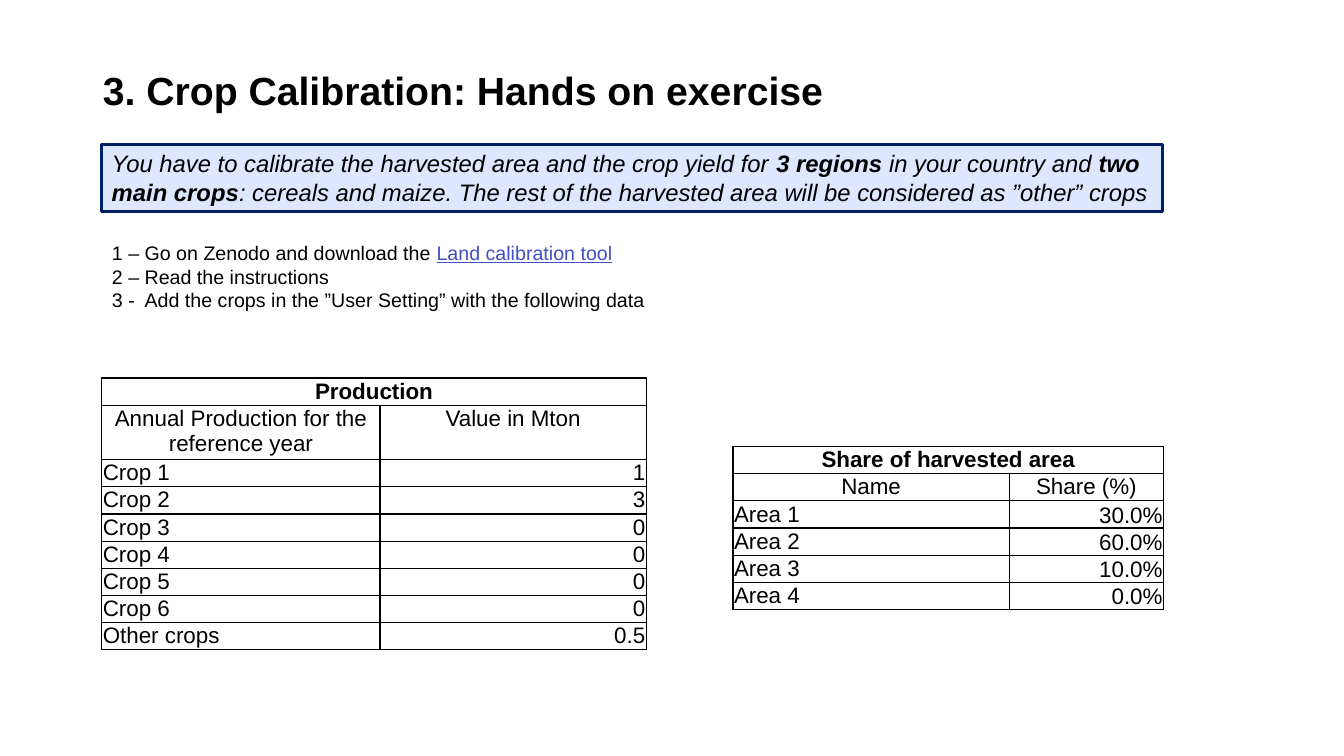
from dataclasses import dataclass

from lxml import etree
from pptx import Presentation
from pptx.dml.color import RGBColor
from pptx.enum import shapes, text
from pptx.oxml import ns
from pptx.util import Inches, Pt


@dataclass(frozen=True)
class Theme:
    font: str = "Arial"
    ink: str = "000000"
    link: str = "4151C3"
    brief_fill: str = "DDE7FF"
    brief_line: str = "012069"
    title_size: int = 28
    brief_size: int = 17
    steps_size: int = 14
    table_size: int = 16
    border_width: float = 1


THEME = Theme()

BRIEF = [
    ("You have to calibrate the harvested area and the crop yield for ", False),
    ("3 regions ", True),
    ("in your country and ", False),
    ("two main crops", True),
    (": cereals and maize. The rest of the harvested area will be "
     "considered as ”other” crops", False),
]
STEPS = [
    [("1 – Go on Zenodo and download the ", False), ("Land calibration tool", True)],
    [("2 – Read the instructions", False)],
    [("3 -  Add the crops in the ”User Setting” with the following data", False)],
]
PRODUCTION = [
    ("Annual Production for the reference year", "Value in Mton"),
    ("Crop 1", "1"),
    ("Crop 2", "3"),
    ("Crop 3", "0"),
    ("Crop 4", "0"),
    ("Crop 5", "0"),
    ("Crop 6", "0"),
    ("Other crops", "0.5"),
]
HARVESTED_SHARE = [
    ("Name", "Share (%)"),
    ("Area 1", "30.0%"),
    ("Area 2", "60.0%"),
    ("Area 3", "10.0%"),
    ("Area 4", "0.0%"),
]


def place(shape, box):
    shape.left, shape.top, shape.width, shape.height = map(Inches, box)


def style(run, size, color=THEME.ink, bold=False, italic=False, underline=False):
    font = run.font
    font.name, font.size = THEME.font, Pt(size)
    font.color.rgb = RGBColor.from_string(color)
    font.bold, font.italic, font.underline = bold, italic, underline


def add_run(paragraph, words, size, **look):
    run = paragraph.add_run()
    run.text = words
    style(run, size, **look)


def set_insets(frame):
    frame.margin_left = frame.margin_right = Inches(0.1)
    frame.margin_top = frame.margin_bottom = Inches(0.05)


def fill_title(title, box):
    place(title, box)
    frame = title.text_frame
    set_insets(frame)
    frame.auto_size = text.MSO_AUTO_SIZE.NONE
    frame.vertical_anchor = text.MSO_ANCHOR.BOTTOM
    frame.text = "3. Crop Calibration: Hands on exercise"
    heading = frame.paragraphs[0]
    heading.alignment = text.PP_ALIGN.LEFT
    heading.line_spacing = 0.9
    style(heading.runs[0], THEME.title_size, bold=True)


def add_brief(slide, box):
    brief = slide.shapes.add_shape(shapes.MSO_SHAPE.RECTANGLE, *map(Inches, box))
    brief.shadow.inherit = False
    brief.fill.solid()
    brief.fill.fore_color.rgb = RGBColor.from_string(THEME.brief_fill)
    brief.line.color.rgb = RGBColor.from_string(THEME.brief_line)
    brief.line.width = Pt(2.25)
    frame = brief.text_frame
    set_insets(frame)
    frame.word_wrap = True
    frame.vertical_anchor = text.MSO_ANCHOR.TOP
    task = frame.paragraphs[0]
    task.alignment = text.PP_ALIGN.LEFT
    for words, bold in BRIEF:
        add_run(task, words, THEME.brief_size, bold=bold, italic=True)


def fill_steps(body, box):
    place(body, box)
    frame = body.text_frame
    set_insets(frame)
    frame.auto_size = text.MSO_AUTO_SIZE.NONE
    for index, parts in enumerate(STEPS):
        step = frame.add_paragraph() if index else frame.paragraphs[0]
        properties = step._p.get_or_add_pPr()
        properties.set("marL", "0")
        properties.set("indent", "0")
        etree.SubElement(properties, ns.qn("a:buNone"))
        step.space_before = Pt(0)
        for words, linked in parts:
            add_run(step, words, THEME.steps_size, underline=linked,
                    color=THEME.link if linked else THEME.ink)


def add_borders(cell):
    properties = cell._tc.get_or_add_tcPr()
    for index, side in enumerate(("lnL", "lnR", "lnT", "lnB")):
        border = etree.Element(ns.qn(f"a:{side}"), w=str(Pt(THEME.border_width)))
        fill = etree.SubElement(border, ns.qn("a:solidFill"))
        etree.SubElement(fill, ns.qn("a:srgbClr"), val=THEME.ink)
        properties.insert(index, border)


def fill_cell(cell, words, align, anchor, bold):
    cell.fill.background()
    add_borders(cell)
    cell.margin_left = cell.margin_right = cell.margin_top = Inches(0.01)
    cell.margin_bottom = 0
    cell.vertical_anchor = anchor
    cell.text = words
    entry = cell.text_frame.paragraphs[0]
    entry.alignment = align
    for run in entry.runs:
        style(run, THEME.table_size, bold=bold)


def add_data_table(slide, origin, widths, heading, rows, header_height=0.27,
                   value_anchor=text.MSO_ANCHOR.TOP):
    """Two columns under a merged heading; origin is the top left corner."""
    heights = [0.27, header_height] + [0.27] * (len(rows) - 1)
    box = (*origin, sum(widths), sum(heights))
    table = slide.shapes.add_table(len(heights), 2, *map(Inches, box)).table
    table.first_row = table.horz_banding = False
    for column, width in zip(table.columns, widths):
        column.width = Inches(width)
    for row, height in zip(table.rows, heights):
        row.height = Inches(height)
    table.cell(0, 0).merge(table.cell(0, 1))
    for r, entries in enumerate([(heading, ""), *rows]):
        for c, words in enumerate(entries):
            align, anchor = text.PP_ALIGN.CENTER, text.MSO_ANCHOR.TOP
            if r > 1:
                align = (text.PP_ALIGN.LEFT, text.PP_ALIGN.RIGHT)[c]
                anchor = (anchor, value_anchor)[c]
            fill_cell(table.cell(r, c), words, align, anchor, bold=r == 0)


def build_exercise(deck):
    slide = deck.slides.add_slide(deck.slide_layouts[1])
    left = 1.01
    fill_title(slide.shapes.title, (0.92, 0, 11.5, 1.18))
    fill_steps(slide.placeholders[1], (left, 2.34, 6.17, 0.81))
    add_brief(slide, (left, 1.43, 10.52, 0.67))
    add_data_table(slide, (7.27, 4.43), (2.74, 1.53), "Share of harvested area",
                   HARVESTED_SHARE, value_anchor=text.MSO_ANCHOR.BOTTOM)
    add_data_table(slide, (left, 3.75), (2.76, 2.64), "Production",
                   PRODUCTION, header_height=0.54)


def main():
    deck = Presentation()
    deck.slide_width, deck.slide_height = Inches(13.33), Inches(7.5)
    build_exercise(deck)
    deck.save("out.pptx")


if __name__ == "__main__":
    main()
